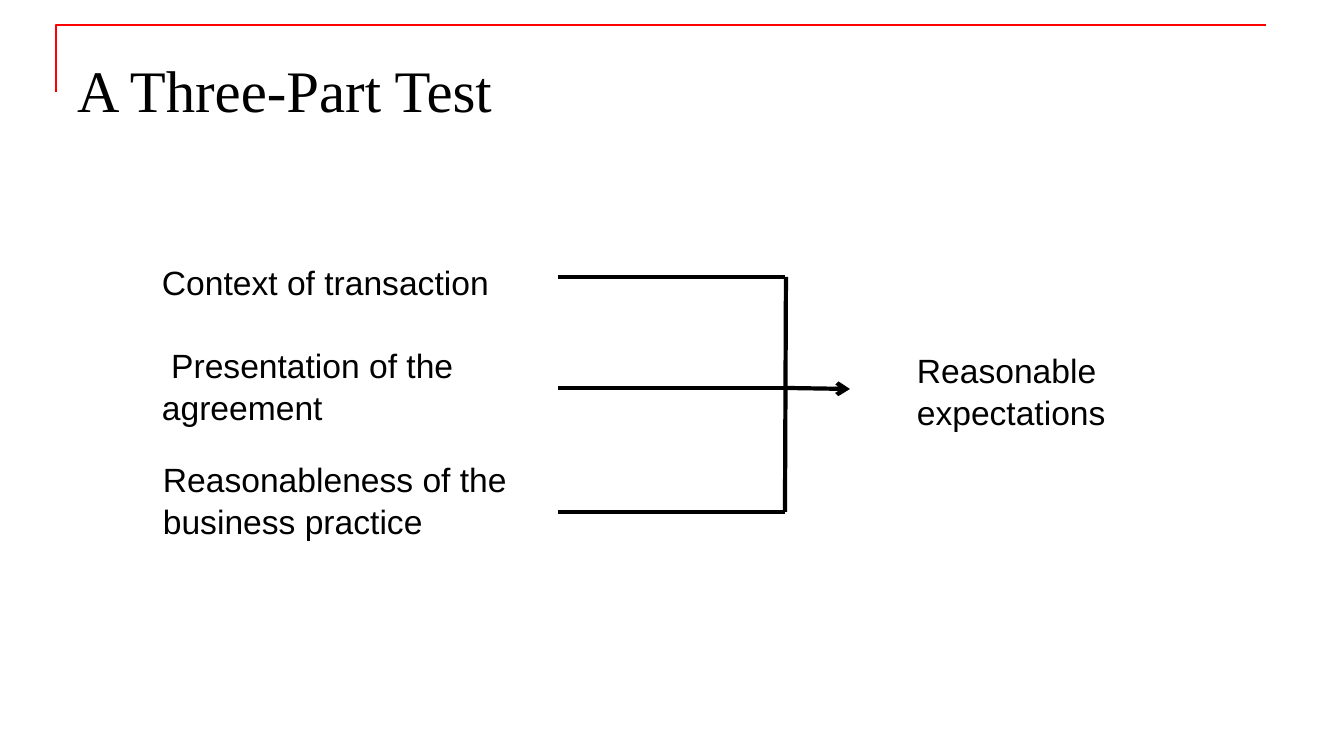
from lxml import etree
from pptx import Presentation
from pptx import util as u
from pptx.dml.color import RGBColor
from pptx.enum import shapes, text
from pptx.oxml.ns import qn

# Content
TITLE = "A Three-Part Test"
# (left, top, width, height), paragraphs
LABELS = [
    ((152, 255, 450, 173), ["Context of transaction", " Presentation of the agreement"]),
    ((153, 452, 475, 92), ["Reasonableness of the business practice"]),
    ((907, 343, 294, 92), ["Reasonable", "expectations"]),
]
PARAGRAPH_GAPS = [29, 0, 0]  # points before each following paragraph
FRAME = [(56, 92), (56, 25), (1266, 25)]
BRANCH_LEFT, BRANCH_RIGHT, SPINE_TOP = 558, 785, 786
BRANCH_YS = [277, 388, 512]
ARROW_END = (850, 389)
COLORS = {"ink": "000000", "frame": "FF0000", "paper": "FFFFFF"}

PX = 914400 / 100.8


def px(n):
    return u.Emu(round(n * PX))


def rgb(name):
    return RGBColor.from_string(COLORS[name])


def place(s, left, top, width, height):
    s.left, s.top, s.width, s.height = map(px, (left, top, width, height))


def write(s, paragraphs, font="Arial", size=24, color="ink", spacing=1.05, gap=0):
    tf = s.text_frame
    tf.word_wrap = True
    tf.auto_size = text.MSO_AUTO_SIZE.NONE
    tf.vertical_anchor = text.MSO_ANCHOR.TOP
    for i, line in enumerate(paragraphs):
        p = tf.add_paragraph() if i else tf.paragraphs[0]
        p.alignment = text.PP_ALIGN.LEFT
        p.line_spacing = spacing
        p.space_before = u.Pt(gap if i else 0)
        r = p.add_run()
        r.text = line
        r.font.name, r.font.size = font, u.Pt(size)
        r.font.color.rgb = rgb(color)


def connect(slide, start, end, arrow=False):
    c = slide.shapes.add_connector(
        shapes.MSO_CONNECTOR.STRAIGHT, *map(px, start + end))
    c.line.color.rgb = rgb("ink")
    c.line.width = u.Pt(3)
    if arrow:
        etree.SubElement(c.line._get_or_add_ln(), qn("a:tailEnd"), type="arrow")
    etree.SubElement(c._element.spPr, qn("a:effectLst"))


def main():
    prs = Presentation()
    prs.slide_width, prs.slide_height = px(1344), px(756)
    slide = prs.slides.add_slide(prs.slide_layouts[5])
    slide.background.fill.solid()
    slide.background.fill.fore_color.rgb = rgb("paper")

    # Corner frame
    fb = slide.shapes.build_freeform(*FRAME[0], scale=PX)
    fb.add_line_segments(FRAME[1:], close=False)
    s = fb.convert_to_shape()
    s.fill.background()
    s.line.color.rgb = rgb("frame")
    s.line.width = u.Pt(1.5)
    s.shadow.inherit = False

    # Title
    title = slide.shapes.title
    place(title, 67, 43, 1210, 126)
    write(title, [TITLE], font="Times New Roman", size=42, spacing=1)
    title.text_frame.margin_top = px(11)

    # Labels
    for (box, paragraphs), gap in zip(LABELS, PARAGRAPH_GAPS):
        s = slide.shapes.add_textbox(*map(px, box))
        write(s, paragraphs, gap=gap)

    # Branches, spine and arrow
    for y in BRANCH_YS:
        connect(slide, (BRANCH_LEFT, y), (BRANCH_RIGHT, y))
    connect(slide, (SPINE_TOP, BRANCH_YS[0]), (BRANCH_RIGHT, BRANCH_YS[-1]))
    connect(slide, (SPINE_TOP, BRANCH_YS[1]), ARROW_END, arrow=True)

    prs.save("out.pptx")


if __name__ == "__main__":
    main()
